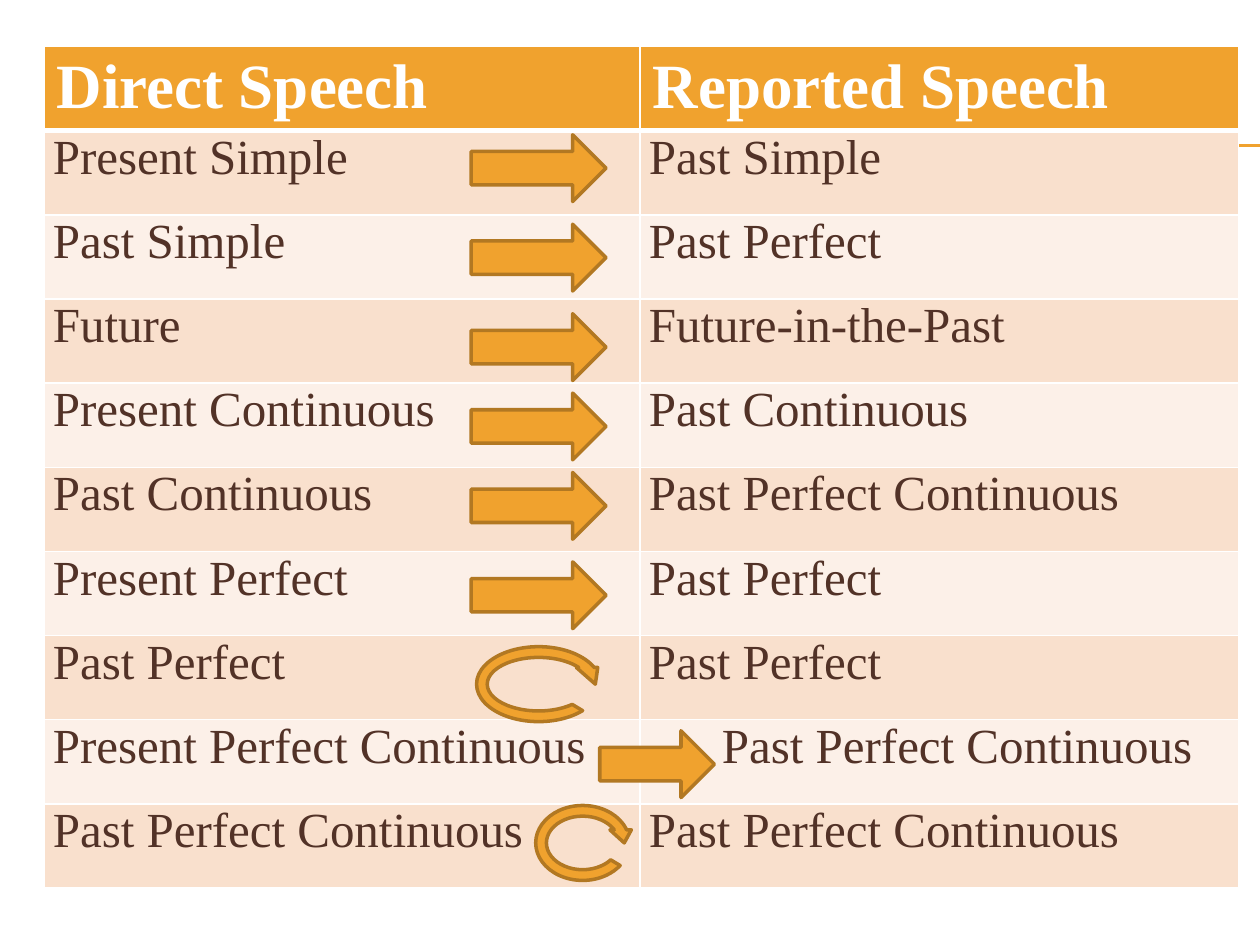
from lxml import etree
from pptx import Presentation
from pptx.dml.color import RGBColor
from pptx.enum.shapes import MSO_CONNECTOR, MSO_SHAPE
from pptx.oxml.ns import qn
from pptx.util import Inches, Pt

LINE = MSO_CONNECTOR.STRAIGHT
ARROW = MSO_SHAPE.RIGHT_ARROW
LOOP = MSO_SHAPE.CIRCULAR_ARROW

FONT = "Times New Roman"
WHITE, GOLD, EDGE, BROWN = "FFFFFF", "F0A22E", "B27822", "523227"
BANDS = ["F9E0CD", "FCF0E8"]
HEAD = {"name": FONT, "size": Pt(36), "bold": True}
BODY = {"name": FONT, "size": Pt(28), "bold": False}
PAD = {"margin_left": Inches(0.07), "margin_right": Inches(0.07),
       "margin_top": 0, "margin_bottom": 0}
SHIFT = Inches(0.65)  # clears the arrow that crosses into the right column

TENSES = [
    ("Direct Speech", "Reported Speech"),
    ("Present Simple", "Past Simple"),
    ("Past Simple", "Past Perfect"),
    ("Future", "Future-in-the-Past"),
    ("Present Continuous", "Past Continuous"),
    ("Past Continuous", "Past Perfect Continuous"),
    ("Present Perfect", "Past Perfect"),
    ("Past Perfect", "Past Perfect"),
    ("Present Perfect Continuous", "Past Perfect Continuous"),
    ("Past Perfect Continuous", "Past Perfect Continuous"),
]
SHIFTED = (8, 1)
COLS = [4.73, 4.75]
TOPS = [1.07, 1.78, 2.49, 3.12, 3.75, 4.46]
BENDS = [0.125, 11.423, 204.577, 18.62, 0.125]
ARROWS = [(3.74, top, 1.07, 0.53) for top in TOPS] + [(4.76, 5.8, 0.91, 0.53)]
LOOPS = [(3.74, 5.09, 1.07, 0.68), (4.21, 6.35, 0.83, 0.68)]


def color(code):
    return RGBColor.from_string(code)


def apply(obj, values):
    for name, value in values.items():
        setattr(obj, name, value)


def add_rule(slide, left, right, y):
    rule = slide.shapes.add_connector(
        LINE, Inches(left), Inches(y), Inches(right), Inches(y))
    rule.line.color.rgb = color(GOLD)
    rule.line.width = Pt(0.75)
    etree.SubElement(rule._element.spPr, qn("a:effectLst"))


def set_edges(cell, top, bottom):
    """Draw white borders; they must come before the fill in tcPr."""
    props = cell._tc.get_or_add_tcPr()
    sides = [("L", 1), ("R", 1), ("T", top), ("B", bottom)]
    for place, (side, width) in enumerate(sides):
        edge = etree.Element(qn(f"a:ln{side}"), w=str(Pt(width)))
        fill = etree.SubElement(edge, qn("a:solidFill"))
        etree.SubElement(fill, qn("a:srgbClr"), val=WHITE)
        props.insert(place, edge)


def fill_cell(cell, text, row):
    head = row == 0
    cell.text = text
    font = cell.text_frame.paragraphs[0].runs[0].font
    apply(font, HEAD if head else BODY)
    font.color.rgb = color(WHITE if head else BROWN)
    if not head:
        apply(cell, PAD)
    cell.fill.solid()
    cell.fill.fore_color.rgb = color(GOLD if head else BANDS[(row - 1) % 2])
    set_edges(cell, top=3 if row == 1 else 1, bottom=3 if head else 1)


def add_tenses(slide, box):
    table = slide.shapes.add_table(
        len(TENSES), len(COLS), *map(Inches, box)).table
    for col, width in zip(table.columns, COLS):
        col.width = Inches(width)
    for row, pair in enumerate(TENSES):
        for col, text in enumerate(pair):
            fill_cell(table.cell(row, col), text, row)
    table.cell(*SHIFTED).margin_left = SHIFT


def add_arrow(slide, kind, box, bends=()):
    arrow = slide.shapes.add_shape(kind, *map(Inches, box))
    arrow.shadow.inherit = False
    arrow.fill.solid()
    arrow.fill.fore_color.rgb = color(GOLD)
    arrow.line.color.rgb = color(EDGE)
    arrow.line.width = Pt(2)
    for place, bend in enumerate(bends):
        arrow.adjustments[place] = bend


def main():
    deck = Presentation()
    deck.slide_width, deck.slide_height = Inches(10), Inches(7.5)
    slide = deck.slides.add_slide(deck.slide_layouts[6])
    for y in (1.15, 1.16):
        add_rule(slide, 0.56, 10, y)
    add_tenses(slide, (0.35, 0.37, 9.48, 6.68))
    for box in ARROWS:
        add_arrow(slide, ARROW, box)
    for box in LOOPS:
        add_arrow(slide, LOOP, box, BENDS)
    deck.save("out.pptx")


if __name__ == "__main__":
    main()
